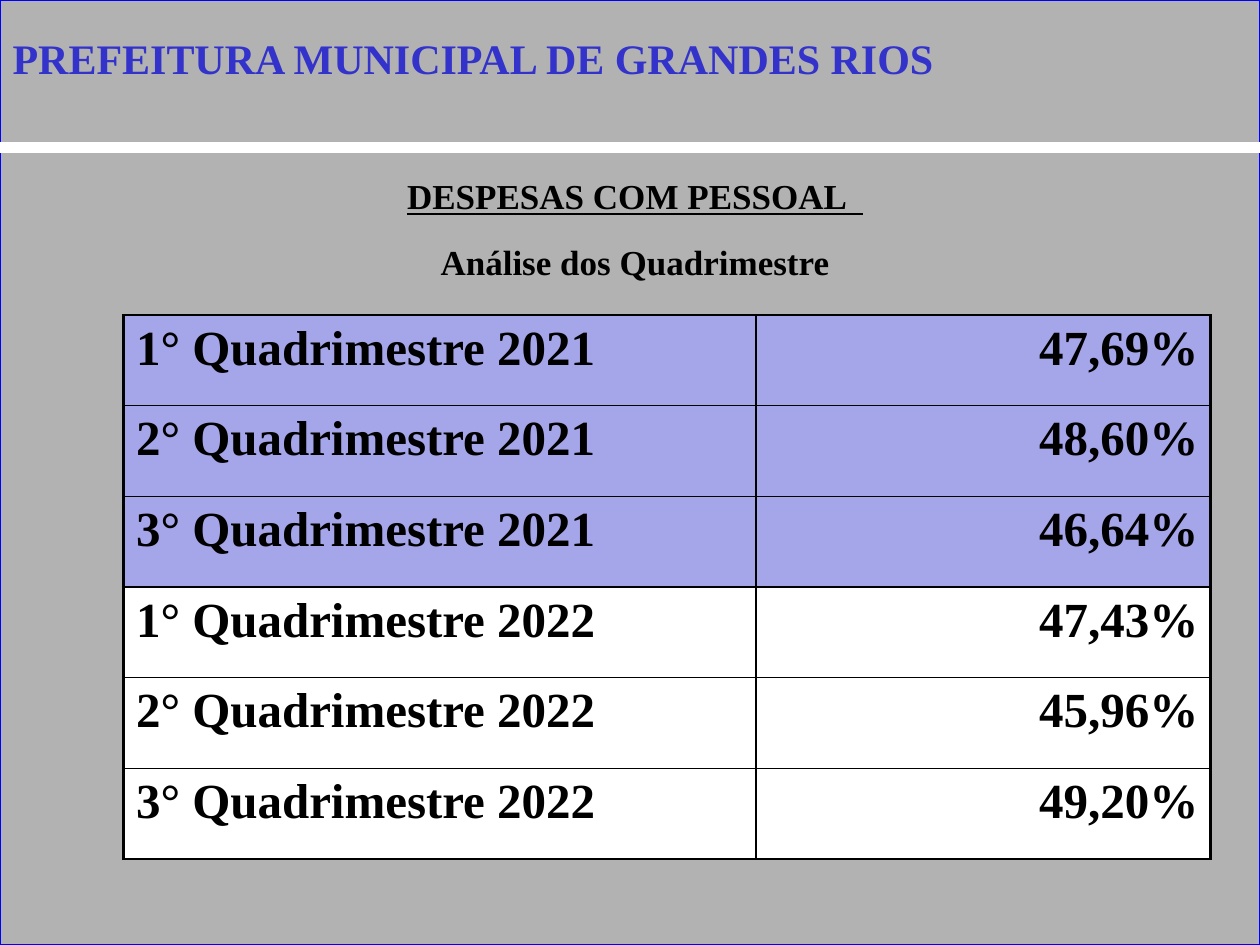
"""Builds the slide on personnel expenses by four-month period."""
import dataclasses

import pptx
import pptx.dml.color
import pptx.enum.shapes
import pptx.enum.text
import pptx.oxml
import pptx.oxml.ns
import pptx.util

Inches = pptx.util.Inches
Pt = pptx.util.Pt
Align = pptx.enum.text.PP_ALIGN
NAMESPACE = pptx.oxml.ns.nsdecls("a")


@dataclasses.dataclass(frozen=True)
class Theme:
    font: str = "Times New Roman"
    background: str = "B2B2B2"
    frame: str = "0000FF"
    white: str = "FFFFFF"
    ink: str = "000000"
    title: str = "3333CC"
    shadow: str = "808080"
    previous_year: str = "A5A5E9"
    title_size: int = 24
    heading_size: int = 20
    table_size: int = 28
    thin: float = 1
    thick: float = 2.25


THEME = Theme()
PERIODS = [
    ("1° Quadrimestre 2021", "47,69%"),
    ("2° Quadrimestre 2021", "48,60%"),
    ("3° Quadrimestre 2021", "46,64%"),
    ("1° Quadrimestre 2022", "47,43%"),
    ("2° Quadrimestre 2022", "45,96%"),
    ("3° Quadrimestre 2022", "49,20%"),
]


def rgb(value):
    return pptx.dml.color.RGBColor.from_string(value)


def place(shape, left, top, width, height):
    shape.left, shape.top = Inches(left), Inches(top)
    shape.width, shape.height = Inches(width), Inches(height)


def add_run(paragraph, text, size, color, underline=False):
    run = paragraph.add_run()
    run.text = text
    run.font.name = THEME.font
    run.font.size = Pt(size)
    run.font.bold = True
    run.font.underline = underline
    run.font.color.rgb = rgb(color)
    return run


def add_background(slide):
    shape = slide.shapes.add_shape(
        pptx.enum.shapes.MSO_SHAPE.RECTANGLE, 0, 0, Inches(10), Inches(7.5))
    shape.shadow.inherit = False
    shape.fill.solid()
    shape.fill.fore_color.rgb = rgb(THEME.background)
    shape.line.color.rgb = rgb(THEME.frame)
    shape.line.width = Pt(0.75)
    slide.shapes._spTree.insert(2, shape._element)


def add_divider(slide):
    line = slide.shapes.add_connector(
        pptx.enum.shapes.MSO_CONNECTOR.STRAIGHT,
        0, Inches(1.17), Inches(10), Inches(1.17))
    line.line.color.rgb = rgb(THEME.white)
    line.line.width = Pt(6)
    line._element.spPr.append(pptx.oxml.parse_xml(f"<a:effectLst {NAMESPACE}/>"))
    slide.shapes._spTree.insert(3, line._element)


def prepare_frame(shape):
    frame = shape.text_frame
    frame.word_wrap = True
    frame.auto_size = pptx.enum.text.MSO_AUTO_SIZE.NONE
    frame.vertical_anchor = pptx.enum.text.MSO_ANCHOR.TOP
    return frame


def add_text_shadow(run):
    effect = pptx.oxml.parse_xml(
        f'<a:effectLst {NAMESPACE}><a:outerShdw dist="35921" dir="2700000">'
        f'<a:srgbClr val="{THEME.shadow}"/></a:outerShdw></a:effectLst>')
    fill = run.font._element.find(pptx.oxml.ns.qn("a:solidFill"))
    fill.addnext(effect)


def fill_title(slide, text):
    title = slide.shapes.title
    place(title, 0, 0.21, 9.49, 0.5)
    paragraph = prepare_frame(title).paragraphs[0]
    paragraph.alignment = Align.LEFT
    paragraph.space_before = Pt(2)
    add_text_shadow(add_run(paragraph, text, THEME.title_size, THEME.title))


def fill_headings(slide, headings):
    body = slide.placeholders[1]
    place(body, 0.58, 1.17, 8.92, 5.11)
    frame = prepare_frame(body)
    for index, (text, underline) in enumerate(headings):
        paragraph = frame.add_paragraph() if index else frame.paragraphs[0]
        paragraph.alignment = Align.CENTER
        paragraph.line_spacing = 1.5
        paragraph.space_before = Pt(1.5)
        properties = paragraph._p.get_or_add_pPr()
        properties.set("marL", str(Inches(0.5)))
        properties.set("indent", str(Inches(-0.5)))
        properties.append(pptx.oxml.parse_xml(f"<a:buNone {NAMESPACE}/>"))
        add_run(paragraph, text, THEME.heading_size, THEME.ink, underline)


def set_borders(cell, **widths):
    properties = cell._tc.get_or_add_tcPr()
    for index, (side, width) in enumerate(widths.items()):
        properties.insert(index, pptx.oxml.parse_xml(
            f'<a:ln{side} {NAMESPACE} w="{Pt(width)}"><a:solidFill>'
            f'<a:srgbClr val="{THEME.ink}"/></a:solidFill></a:ln{side}>'))


def fill_cell(cell, text, alignment, fill, left, right):
    cell.fill.solid()
    cell.fill.fore_color.rgb = rgb(fill)
    paragraph = cell.text_frame.paragraphs[0]
    paragraph.alignment = alignment
    add_run(paragraph, text, THEME.table_size, THEME.ink)
    set_borders(cell, L=left, R=right, T=THEME.thin, B=THEME.thin)


def add_period_table(slide, periods):
    table = slide.shapes.add_table(
        len(periods), 2, Inches(0.98), Inches(2.5), Inches(8.63), Inches(4.32)).table
    table.first_row = table.horz_banding = False
    for column, width in zip(table.columns, (5.02, 3.61)):
        column.width = Inches(width)
    for index, (period, share) in enumerate(periods):
        table.rows[index].height = Inches(0.72)
        fill = THEME.previous_year if period.endswith("2021") else THEME.white
        fill_cell(table.cell(index, 0), period, Align.LEFT, fill,
                  THEME.thick, THEME.thin)
        fill_cell(table.cell(index, 1), share, Align.RIGHT, fill,
                  THEME.thin, THEME.thick)


def main():
    presentation = pptx.Presentation()
    presentation.slide_width = Inches(10)
    presentation.slide_height = Inches(7.5)
    slide = presentation.slides.add_slide(presentation.slide_layouts[1])
    add_background(slide)
    add_divider(slide)
    fill_title(slide, "PREFEITURA MUNICIPAL DE GRANDES RIOS")
    fill_headings(slide, [("DESPESAS COM PESSOAL  ", True),
                          ("Análise dos Quadrimestre", False)])
    add_period_table(slide, PERIODS)
    presentation.save("out.pptx")


if __name__ == "__main__":
    main()
